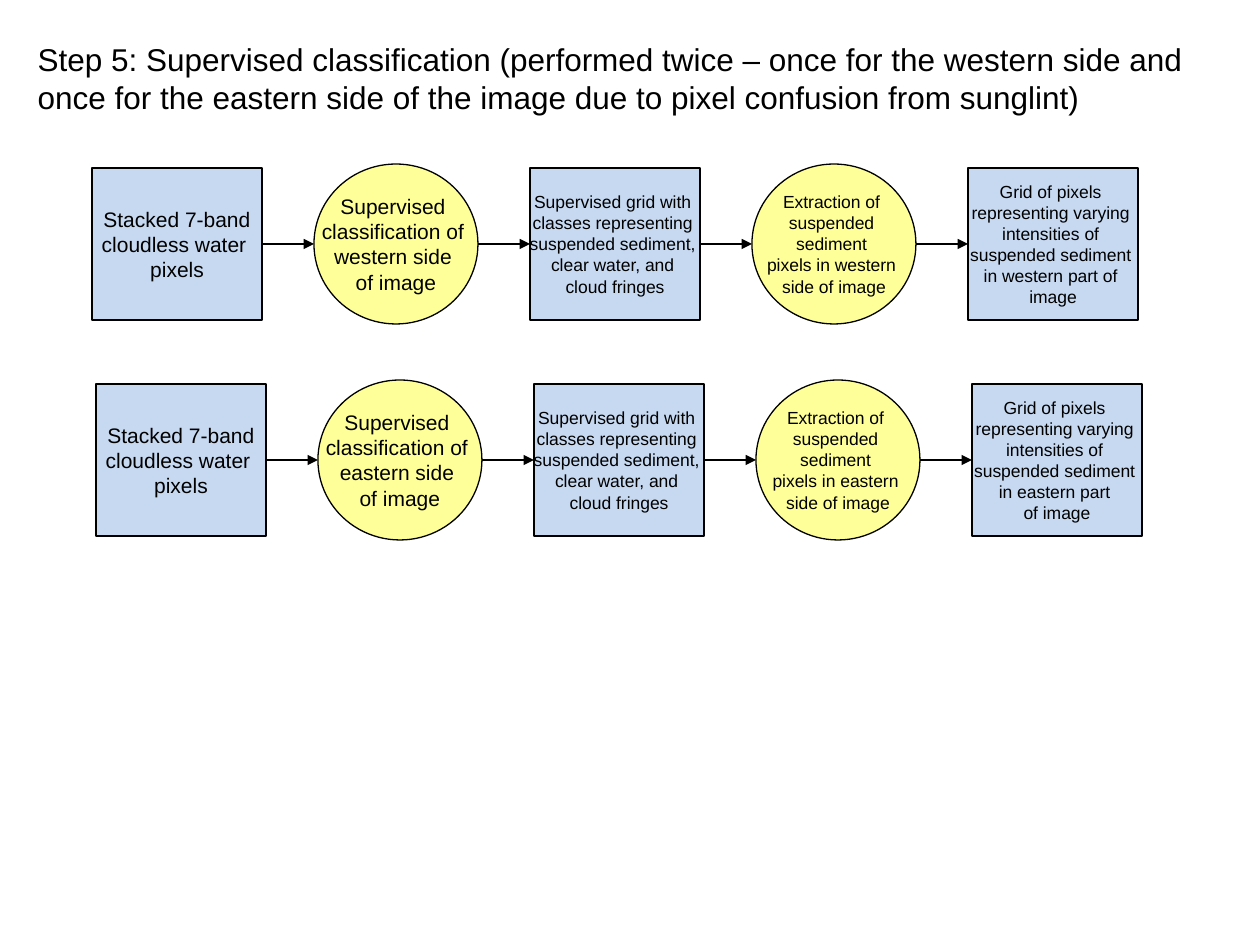
from pptx import Presentation
from pptx.dml.color import RGBColor as RGB
from pptx.enum.shapes import MSO_CONNECTOR as LINE, MSO_SHAPE as SHAPE
from pptx.enum.text import MSO_ANCHOR as ANCHOR, MSO_AUTO_SIZE as FIT, PP_ALIGN as ALIGN
from pptx.oxml.ns import qn
from pptx.util import Pt
from lxml.etree import SubElement

COLORS = {"ink": "000000", "data": "C6D9F1", "step": "FFFF99"}


def px(n):
    return round(n * 914400 / 126)


def write(para, text, size, align):
    para.alignment = align
    run = para.add_run()
    run.text = text
    run.font.size = Pt(size)
    run.font.name = "Arial"
    run.font.color.rgb = RGB.from_string(COLORS["ink"])


deck = Presentation()
deck.slide_width, deck.slide_height = px(1260), px(945)
slide = deck.slides.add_slide(deck.slide_layouts[5])

# Title
title = slide.shapes.title
title.left, title.top, title.width, title.height = px(25), px(34), px(1178), px(88)
frame = title.text_frame
frame.word_wrap = True
frame.auto_size = FIT.NONE
frame.vertical_anchor = ANCHOR.TOP
write(frame.paragraphs[0],
      "Step 5: Supervised classification (performed twice – once for the western side and "
      "once for the eastern side of the image due to pixel confusion from sunglint)",
      18, ALIGN.LEFT)

# Steps of each flow: font size and lines; data boxes and process circles alternate
STEPS = [
    (12, "Stacked 7-band|cloudless water |pixels"),
    (12, "Supervised |classification of |{side} side |of image"),
    (10, "Supervised grid with |classes representing |suspended sediment, "
         "|clear water, and |cloud fringes"),
    (10, "Extraction of |suspended |sediment |pixels in {side} |side of image"),
    (10, "Grid of pixels |representing varying |intensities of |suspended sediment "
         "|in {side} part {end}"),
]
FLOWS = [("western", "of |image", 92, 244), ("eastern", "|of image", 96, 460)]

for side, end, left, mid in FLOWS:
    last = None
    for i, (size, text) in enumerate(STEPS):
        # Box or circle
        box = i % 2 == 0
        kind, fill, wide, high = ((SHAPE.FLOWCHART_PROCESS, "data", 170, 152) if box
                                  else (SHAPE.OVAL, "step", 164, 160))
        x = left + i // 2 * 438 + (0 if box else 222)
        node = slide.shapes.add_shape(kind, px(x), px(mid - high // 2), px(wide), px(high))
        node.shadow.inherit = False
        node.fill.solid()
        node.fill.fore_color.rgb = RGB.from_string(COLORS[fill])
        node.line.color.rgb = RGB.from_string(COLORS["ink"])
        node.line.width = Pt(0.75)

        # Label
        frame = node.text_frame
        frame.word_wrap = False
        frame.vertical_anchor = ANCHOR.MIDDLE
        for n, row in enumerate(text.format(side=side, end=end).split("|")):
            para = frame.add_paragraph() if n else frame.paragraphs[0]
            write(para, row, size, ALIGN.CENTER)

        # Arrow from the step before
        if last:
            arrow = slide.shapes.add_connector(
                LINE.STRAIGHT, last.left + last.width, px(mid), node.left, px(mid))
            if box:
                arrow.end_connect(node, 1)
            else:
                arrow.begin_connect(last, 3)
            arrow.line.color.rgb = RGB.from_string(COLORS["ink"])
            arrow.line.width = Pt(0.75)
            SubElement(arrow.line._get_or_add_ln(), qn("a:tailEnd"), type="triangle")
            SubElement(arrow._element.spPr, qn("a:effectLst"))
        last = node

deck.save("out.pptx")
